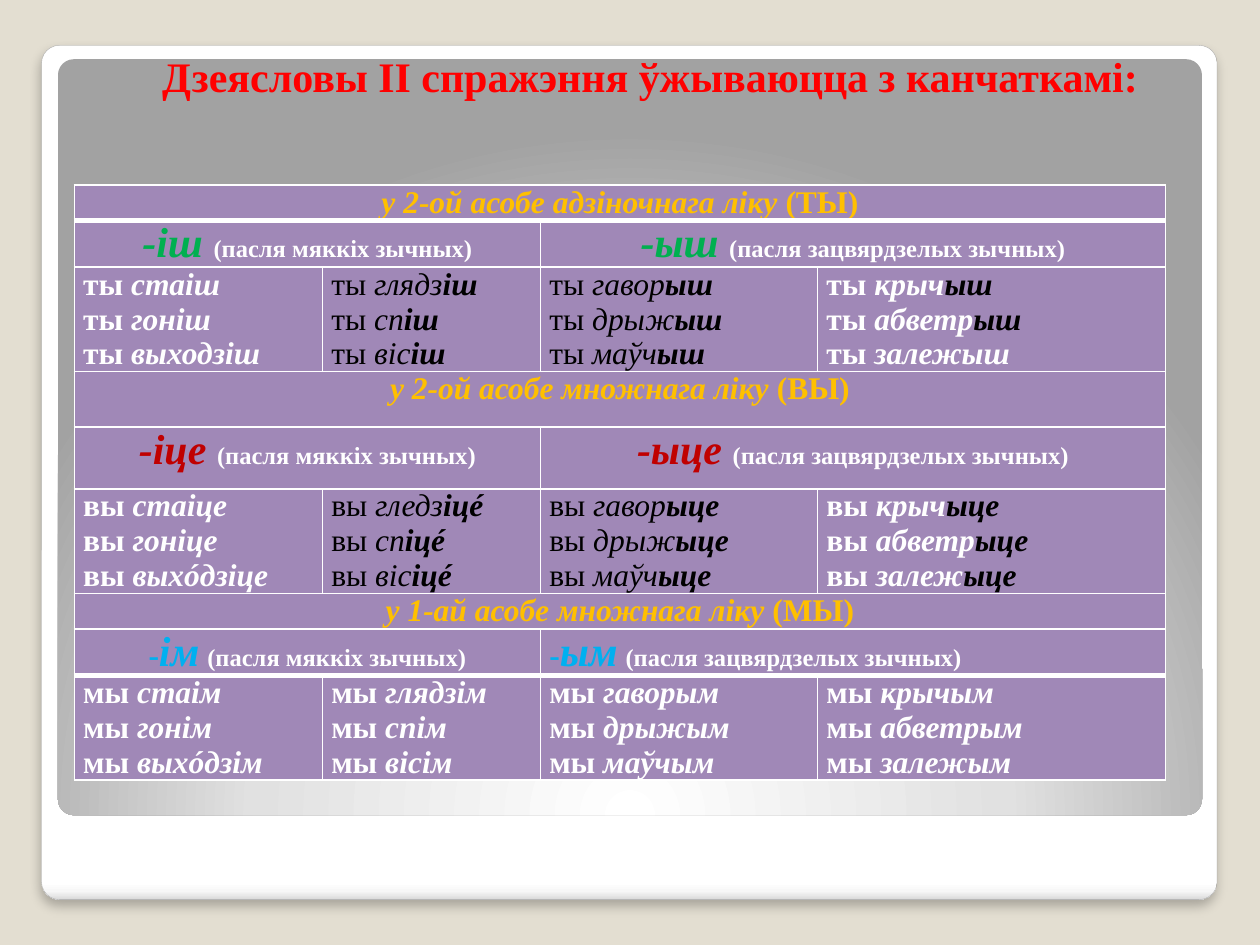
from lxml import etree
from pptx import Presentation
from pptx.dml.color import RGBColor
from pptx.enum.shapes import MSO_SHAPE
from pptx.enum.text import MSO_ANCHOR, PP_ALIGN
from pptx.oxml import parse_xml
from pptx.oxml.ns import nsdecls, qn
from pptx.util import Inches, Pt

ROUNDED = MSO_SHAPE.ROUNDED_RECTANGLE
BOTTOM = MSO_ANCHOR.BOTTOM
LEFT, CENTER, JUSTIFY = PP_ALIGN.LEFT, PP_ALIGN.CENTER, PP_ALIGN.JUSTIFY

THEME = {
    "font": "Times New Roman",
    "background": "E3DED1", "title": "FF0000", "cell": "A088B7",
    "rule": "FFFFFF", "light": "FFFFFF", "dark": "000000", "person": "FFC000",
    "frame": "A4A4A4", "large": 24, "body": 18, "note": 14,
    "thin": 1, "thick": 3,
}
TITLE = "Дзеясловы ІІ спражэння ўжываюцца з канчаткамі:"
NOTES = ["(пасля мяккіх зычных)", "(пасля зацвярдзелых зычных)"]
GROUPS = [
    {"person": "у 2-ой асобе адзіночнага ліку ", "label": "(ТЫ)", "pronoun": "ты ",
     "color": "00B050", "endings": [("", "-іш "), ("", "-ыш ")],
     "aligns": (CENTER, CENTER), "styles": ("light", "dark", "dark", "mixed"),
     "verbs": [["стаіш", "гоніш", "выходзіш"],
               ["глядз|іш", "сп|іш", "віс|іш"],
               ["гавор|ыш", "дрыж|ыш", "маўч|ыш"],
               ["крыч|ыш", "абветр|ыш", "залежыш"]]},
    {"person": "у 2-ой асобе множнага ліку ", "label": "(ВЫ)", "pronoun": "вы ",
     "color": "C00000", "endings": [("", "-іце "), ("", "-ыце ")],
     "aligns": (CENTER, CENTER), "styles": ("light", "dark", "dark", "mixed"),
     "verbs": [["стаіце", "гоніце", "выхóдзіце"],
               ["гледз|іцé", "сп|іцé", "віс|іцé"],
               ["гавор|ыце", "дрыж|ыце", "маўч|ыце"],
               ["крыч|ыце", "абветр|ыце", "залеж|ыце"]]},
    {"person": "у 1-ай асобе множнага ліку ", "label": "(МЫ)", "pronoun": "мы ",
     "color": "00B0F0", "endings": [("-", "ім"), ("-", "ым")],
     "aligns": (CENTER, JUSTIFY), "styles": ("light",) * 4,
     "verbs": [["стаім", "гонім", "выхóдзім"],
               ["глядзім", "спім", "вісім"],
               ["гаворым", "дрыжым", "маўчым"],
               ["крычым", "абветрым", "залежым"]]},
]
VERB_STYLES = {
    "light": ("light", "light", True),
    "dark": ("dark", "dark", False),
    "mixed": ("light", "dark", True),
}
COLUMNS = [1.97, 1.73, 2.2, 2.76]
ROWS = [0.28, 0.37, 0.83, 0.44, 0.49, 0.83, 0.28, 0.37, 0.83]
TABLE_LEFT, TABLE_TOP = 0.59, 1.47
PANELS = [
    {"at": (0.33, 0.36, 9.33, 6.78), "line": True,
     "stops": [(0, "FFFFFF"), (98, "FFFFFF"), (99, "F7F7F7"), (100, "DADADA")],
     "direction": '<a:lin ang="5400000" scaled="0"/>'},
    {"at": (0.46, 0.47, 9.08, 6), "line": False,
     "stops": [(0, "FFFFFF"), (55, "E1E1E1"), (100, "A2A2A2")],
     "direction": '<a:path path="circle"><a:fillToRect l="50000" t="175000" '
                  'r="50000" b="-75000"/></a:path>'},
]
SHADOW = (f'<a:effectLst {nsdecls("a")}><a:outerShdw blurRad="{Pt(6)}" dist="{Pt(4)}" '
          'dir="5400000" algn="t" rotWithShape="0"><a:srgbClr val="000000">'
          '<a:alpha val="25000"/></a:srgbClr></a:outerShdw></a:effectLst>')


def add_text(para, text, color="light", size="body", bold=True, italic=False):
    span = para.add_run()
    span.text = text
    font = span.font
    font.name, font.size = THEME["font"], Pt(THEME[size])
    font.bold, font.italic = bold, italic
    font.color.rgb = RGBColor.from_string(THEME.get(color, color))


def add_panel(slide, panel):
    shape = slide.shapes.add_shape(ROUNDED, *map(Inches, panel["at"]))
    shape.adjustments[0] = 0.021
    shape.shadow.inherit = False
    shape.line.fill.background()
    stops = "".join(f'<a:gs pos="{place * 1000}"><a:srgbClr val="{color}"/></a:gs>'
                    for place, color in panel["stops"])
    properties = shape.element.spPr
    properties.find(qn("a:prstGeom")).addnext(parse_xml(
        f'<a:gradFill {nsdecls("a")} rotWithShape="1"><a:gsLst>{stops}</a:gsLst>'
        f'{panel["direction"]}</a:gradFill>'))
    if panel["line"]:
        shape.line.color.rgb = RGBColor.from_string(THEME["frame"])
        shape.line.width = Pt(0.16)
        properties.replace(properties.find(qn("a:effectLst")), parse_xml(SHADOW))
    return shape


def style_cell(cell, row):
    cell.margin_left = cell.margin_right = Inches(0.07)
    cell.margin_top = cell.margin_bottom = 0
    cell.fill.solid()
    cell.fill.fore_color.rgb = RGBColor.from_string(THEME["cell"])
    heavy = {("lnB", 0), ("lnT", 1), ("lnB", len(ROWS) - 2), ("lnT", len(ROWS) - 1)}
    properties = cell._tc.get_or_add_tcPr()
    for index, side in enumerate(("lnL", "lnR", "lnT", "lnB")):
        width = THEME["thick" if (side, row) in heavy else "thin"]
        border = etree.Element(qn(f"a:{side}"), w=str(Pt(width)))
        fill = etree.SubElement(border, qn("a:solidFill"))
        etree.SubElement(fill, qn("a:srgbClr"), val=THEME["rule"])
        properties.insert(index, border)


def fill_verbs(cell, group, column):
    stem_color, ending_color, bold = VERB_STYLES[group["styles"][column]]
    for index, verb in enumerate(group["verbs"][column]):
        para = cell.text_frame.paragraphs[0] if index == 0 else cell.text_frame.add_paragraph()
        para.alignment = LEFT if column == 1 else JUSTIFY
        stem, _, ending = verb.partition("|")
        add_text(para, group["pronoun"], color=stem_color, bold=bold)
        add_text(para, stem, color=stem_color, bold=bold, italic=True)
        if ending:
            add_text(para, ending, color=ending_color, italic=True)


def fill_group(table, group, top):
    table.cell(top, 0).merge(table.cell(top, 3))
    para = table.cell(top, 0).text_frame.paragraphs[0]
    para.alignment = CENTER
    add_text(para, group["person"], color="person", italic=True)
    add_text(para, group["label"], color="person")
    for half, (dash, ending) in enumerate(group["endings"]):
        cell = table.cell(top + 1, half * 2)
        cell.merge(table.cell(top + 1, half * 2 + 1))
        para = cell.text_frame.paragraphs[0]
        para.alignment = group["aligns"][half]
        if dash:
            add_text(para, dash, color=group["color"])
        add_text(para, ending, color=group["color"], size="large", italic=True)
        if dash:
            add_text(para, " ")
        add_text(para, NOTES[half], size="note")
    for column in range(len(COLUMNS)):
        fill_verbs(table.cell(top + 2, column), group, column)


def main():
    deck = Presentation()
    deck.slide_width, deck.slide_height = Inches(10), Inches(7.5)
    slide = deck.slides.add_slide(deck.slide_layouts[5])
    slide.background.fill.solid()
    slide.background.fill.fore_color.rgb = RGBColor.from_string(THEME["background"])

    title = slide.shapes.title
    for panel in PANELS:
        title.element.addprevious(add_panel(slide, panel).element)
    title.left, title.top, title.width, title.height = map(Inches, (0.75, 0.52, 8.82, 0.71))
    frame = title.text_frame
    frame.word_wrap, frame.vertical_anchor = True, BOTTOM
    frame.margin_top, frame.margin_bottom = 0, Inches(0.43)
    frame.paragraphs[0].alignment = CENTER
    add_text(frame.paragraphs[0], TITLE, color="title", size="large")

    table = slide.shapes.add_table(
        len(ROWS), len(COLUMNS), Inches(TABLE_LEFT), Inches(TABLE_TOP),
        Inches(sum(COLUMNS)), Inches(sum(ROWS))).table
    table.first_row = table.horz_banding = False
    for column, width in zip(table.columns, COLUMNS):
        column.width = Inches(width)
    for index, (row, height) in enumerate(zip(table.rows, ROWS)):
        row.height = Inches(height)
        for cell in row.cells:
            style_cell(cell, index)
    for index, group in enumerate(GROUPS):
        fill_group(table, group, index * 3)
    deck.save("out.pptx")


if __name__ == "__main__":
    main()
